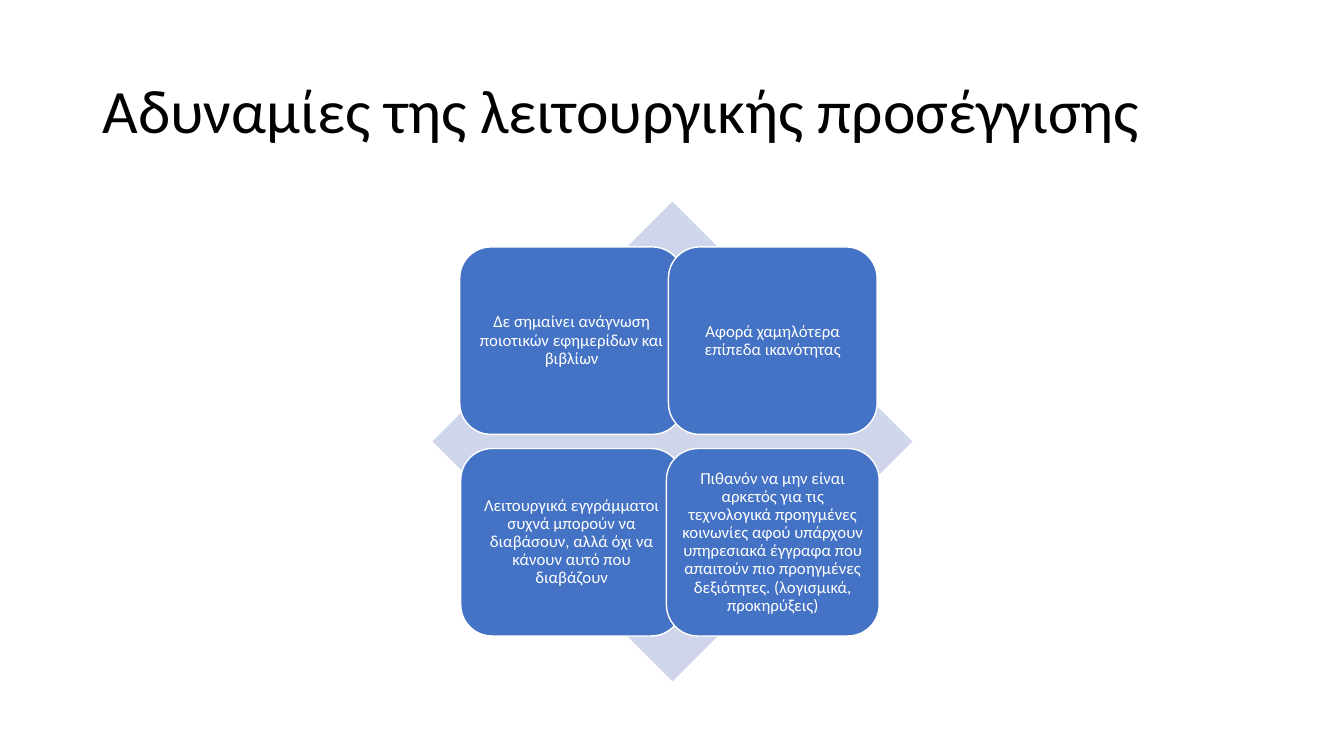
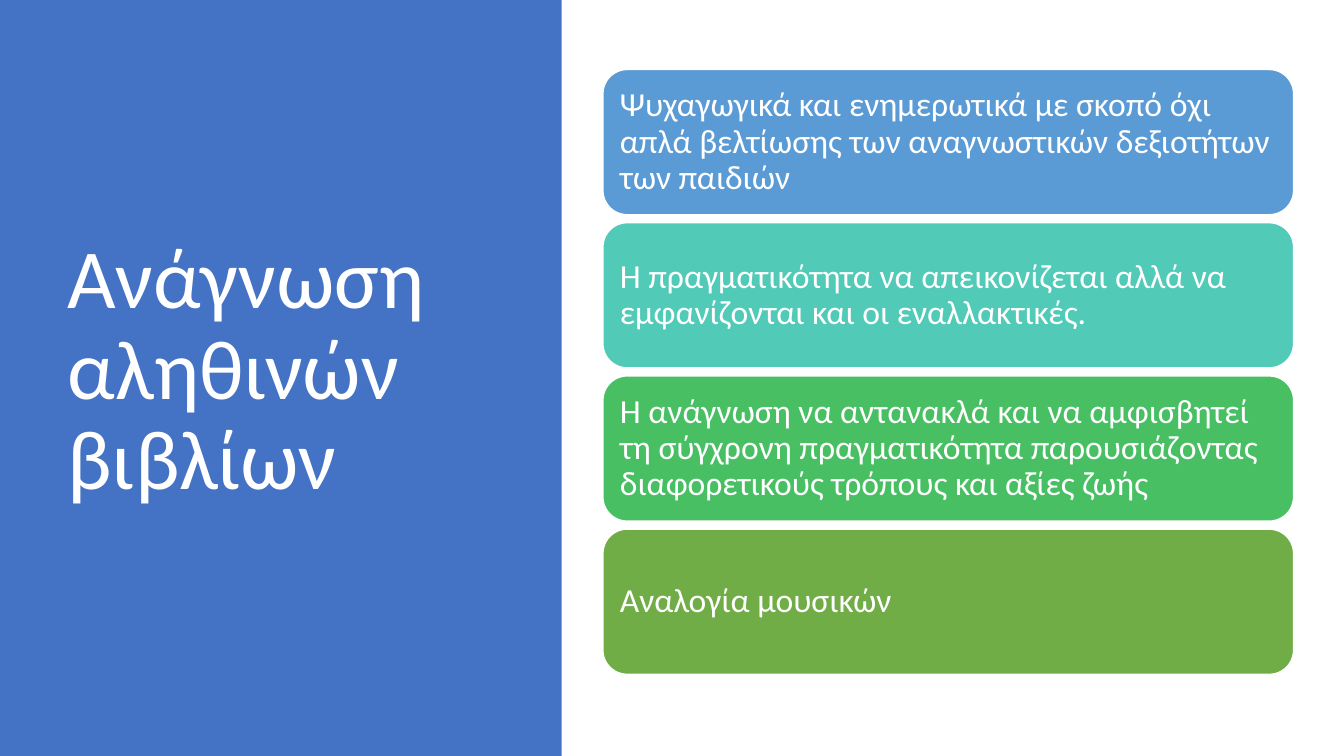
from pptx import Presentation
from pptx import util as u
from pptx.dml.color import RGBColor
from pptx.enum import shapes, text

PX = 9144
FONT = "Calibri"
BLACK = RGBColor(0x00, 0x00, 0x00)
WHITE = RGBColor(0xFF, 0xFF, 0xFF)
BLUE = RGBColor(0x44, 0x72, 0xC4)
PALE = RGBColor(0xCF, 0xD5, 0xEA)
SKY = RGBColor(0x5B, 0x9B, 0xD5)
TEAL = RGBColor(0x52, 0xCA, 0xB8)
GREEN = RGBColor(0x49, 0xBF, 0x64)
OLIVE = RGBColor(0x70, 0xAD, 0x47)

SHAPE = shapes.MSO_SHAPE
ALIGN = text.PP_ALIGN

WEAKNESSES = [
    (456, 245, 222, "Δε σημαίνει ανάγνωση ποιοτικών εφημερίδων και βιβλίων"),
    (663, 245, 207, "Αφορά χαμηλότερα επίπεδα ικανότητας"),
    (457, 445, 220, "Λειτουργικά εγγράμματοι συχνά μπορούν να διαβάσουν, "
                    "αλλά όχι να κάνουν αυτό που διαβάζουν"),
    (661, 445, 211, "Πιθανόν να μην είναι αρκετός για τις τεχνολογικά προηγμένες "
                    "κοινωνίες αφού υπάρχουν υπηρεσιακά έγγραφα που απαιτούν πιο "
                    "προηγμένες δεξιότητες. (λογισμικά, προκηρύξεις)"),
]
READING = [
    (SKY, "Ψυχαγωγικά και ενημερωτικά με σκοπό όχι απλά βελτίωσης των "
          "αναγνωστικών δεξιοτήτων των παιδιών"),
    (TEAL, "Η πραγματικότητα να απεικονίζεται αλλά να εμφανίζονται και οι εναλλακτικές."),
    (GREEN, "Η ανάγνωση να αντανακλά και να αμφισβητεί τη σύγχρονη πραγματικότητα "
            "παρουσιάζοντας διαφορετικούς τρόπους και αξίες ζωής"),
    (OLIVE, "Αναλογία μουσικών"),
]


def apply(target, **values):
    """Set each named value as an attribute of the target."""
    for name, value in values.items():
        setattr(target, name, value)


def px(*lengths):
    """Turn pixel lengths into EMU."""
    return [u.Emu(n * PX) for n in lengths]


def write(sp, words, size, color, align=ALIGN.LEFT, inset=(10, 5)):
    """Write one vertically centred paragraph into a shape."""
    side, edge = px(*inset)
    tf = sp.text_frame
    apply(tf, word_wrap=True, vertical_anchor=text.MSO_ANCHOR.MIDDLE,
          margin_left=side, margin_right=side, margin_top=edge, margin_bottom=edge)
    p = tf.paragraphs[0]
    apply(p, alignment=align, line_spacing=0.9)
    r = p.add_run()
    r.text = words
    apply(r.font, name=FONT, size=u.Pt(size))
    r.font.color.rgb = color


def add_title(s, box, words, size, color):
    """Add a slide title."""
    write(s.shapes.add_textbox(*px(*box)), words, size, color)


def add_block(s, kind, box, fill):
    """Add a flat shape without outline."""
    sp = s.shapes.add_shape(kind, *px(*box))
    sp.shadow.inherit = False
    sp.fill.solid()
    sp.fill.fore_color.rgb = fill
    sp.line.fill.background()
    return sp


def add_card(s, box, fill, words, size, align, inset):
    """Add a rounded card with a white outline and white text."""
    sp = add_block(s, SHAPE.ROUNDED_RECTANGLE, box, fill)
    sp.line.color.rgb = WHITE
    sp.line.width = u.Pt(1)
    write(sp, words, size, WHITE, align, (inset, inset))


def weaknesses_slide(s):
    """Build the four cards over a diamond."""
    add_title(s, (92, 40, 1150, 145), "Αδυναμίες της λειτουργικής προσέγγισης", 44, BLACK)
    add_block(s, SHAPE.DIAMOND, (429, 200, 476, 476), PALE)
    for left, top, width, words in WEAKNESSES:
        add_card(s, (left, top, width, 186), BLUE, words, 12, ALIGN.CENTER, 5)


def reading_slide(s):
    """Build the title panel and the stack of cards."""
    add_block(s, SHAPE.RECTANGLE, (0, 0, 557, 750), BLUE)
    add_title(s, (57, 68, 416, 602), "Ανάγνωση αληθινών βιβλίων", 60, WHITE)
    top, height, gap = 69, 144, 8
    for i, (fill, words) in enumerate(READING):
        box = (598, top + i * (height + gap), 685, height)
        add_card(s, box, fill, words, 24, ALIGN.LEFT, 10)


def main():
    """Build and save the presentation."""
    prs = Presentation()
    prs.slide_width, prs.slide_height = px(1333, 750)
    for build in (weaknesses_slide, reading_slide):
        build(prs.slides.add_slide(prs.slide_layouts[6]))
    prs.save("out.pptx")


if __name__ == "__main__":
    main()
